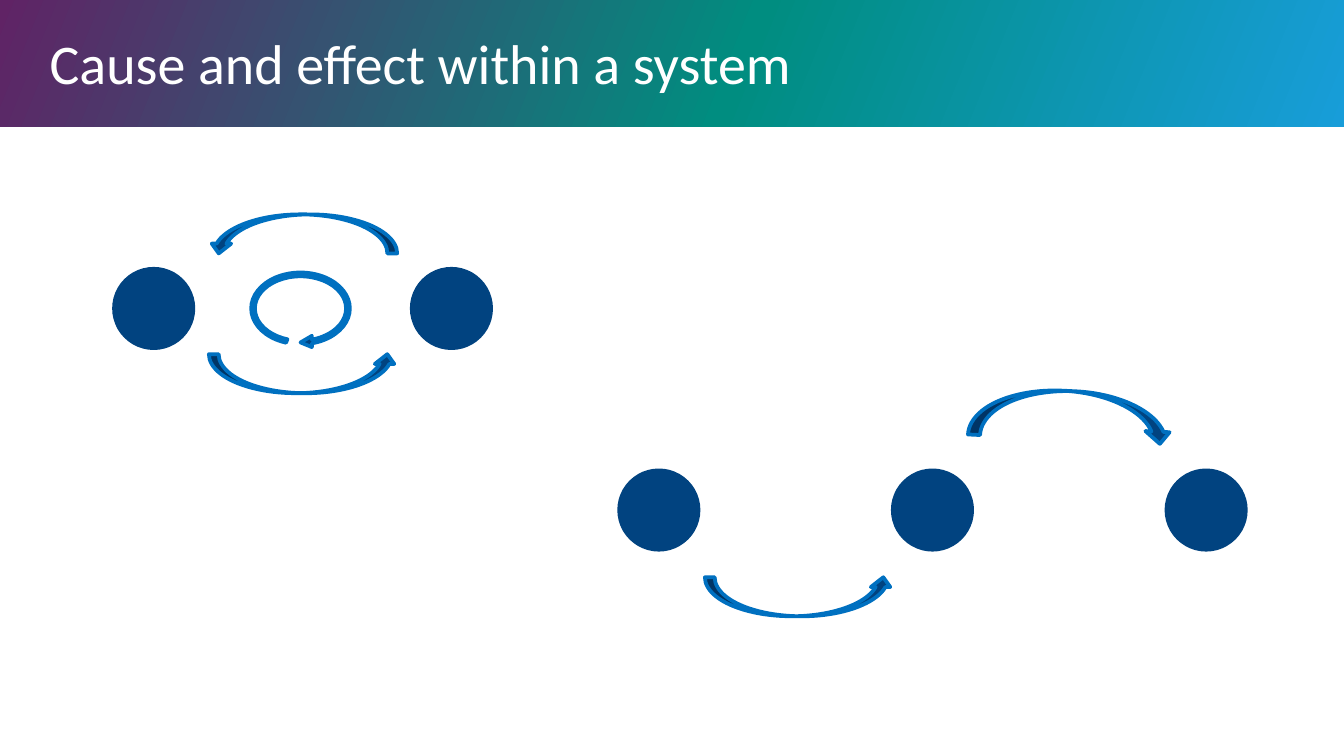
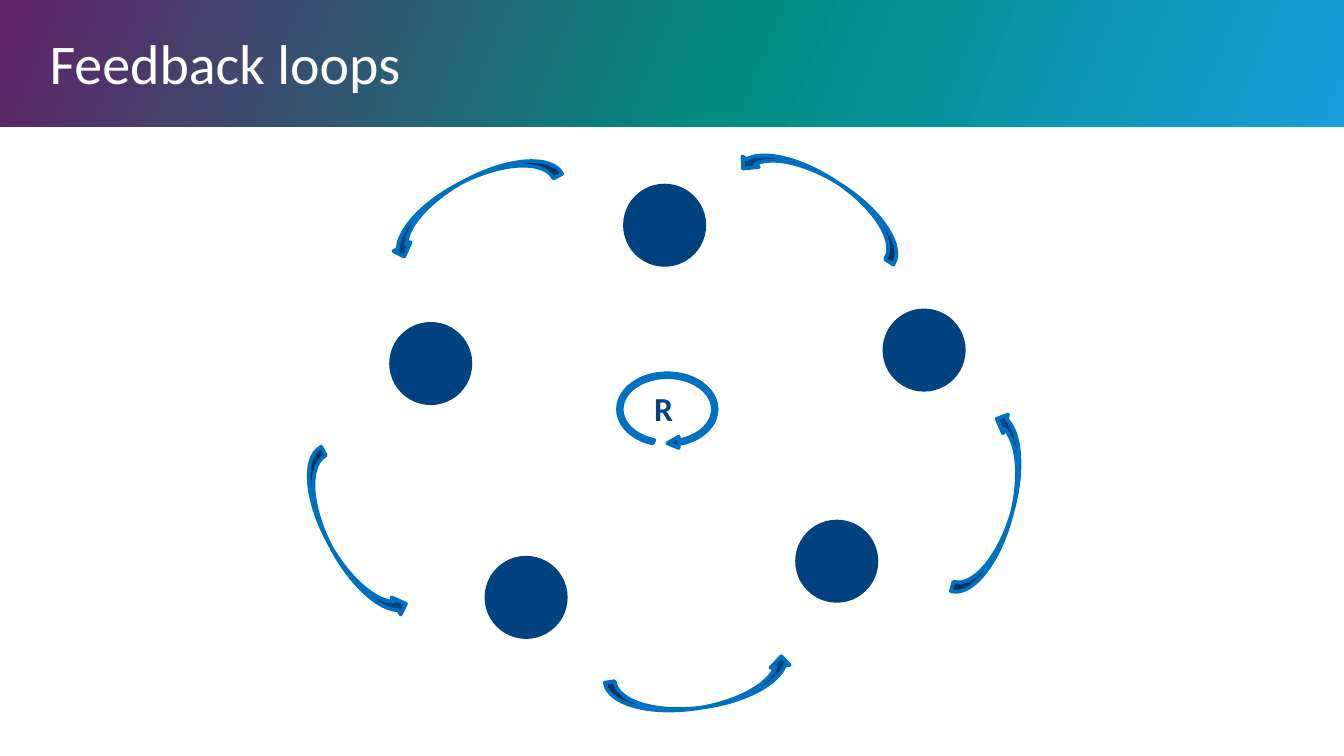
from copy import deepcopy
from lxml import etree
from pptx import Presentation
from pptx.dml.color import RGBColor
from pptx.enum.shapes import MSO_SHAPE
from pptx.enum.text import MSO_ANCHOR, MSO_AUTO_SIZE, PP_ALIGN
from pptx.oxml.ns import qn
from pptx.util import Pt

RECT, OVAL = MSO_SHAPE.RECTANGLE, MSO_SHAPE.OVAL
CURVED_RIGHT, CURVED_LEFT = MSO_SHAPE.CURVED_RIGHT_ARROW, MSO_SHAPE.CURVED_LEFT_ARROW
LOOP = MSO_SHAPE.CIRCULAR_ARROW
LEFT, TOP, MIDDLE = PP_ALIGN.LEFT, MSO_ANCHOR.TOP, MSO_ANCHOR.MIDDLE
NO_FIT, FIT_SHAPE = MSO_AUTO_SIZE.NONE, MSO_AUTO_SIZE.SHAPE_TO_FIT_TEXT

NAVY = RGBColor(0x01, 0x43, 0x80)
BLUE = RGBColor(0x00, 0x70, 0xC0)
WHITE = RGBColor(0xFF, 0xFF, 0xFF)
PURPLE = RGBColor(0x60, 0x23, 0x65)
TEAL = RGBColor(0x00, 0x8D, 0x80)
SKY = RGBColor(0x18, 0x9D, 0xD9)
FONT = "Calibri"
NODE = 42.5
ARROW = (20.9, 100.8)
LOOP_SIZE = (42.5, 56.9)
LOOP_ADJ = (0.047, 11.423, 204.576, 13.769, 0.071)


def write(sp, text, size=18, color=NAVY, bold=False, anchor=TOP, wrap=False, inset=None, fit=NO_FIT):
    tf = sp.text_frame
    tf.word_wrap, tf.vertical_anchor, tf.auto_size = wrap, anchor, fit
    if inset is not None:
        tf.margin_left = tf.margin_top = tf.margin_right = tf.margin_bottom = Pt(inset)
    p = tf.paragraphs[0]
    p.alignment = LEFT
    r = p.add_run()
    r.text = text
    r.font.name, r.font.size, r.font.bold = FONT, Pt(size), bold
    r.font.color.rgb = color


def draw(s, kind, x, y, w, h, line=BLUE, rot=0):
    sp = s.shapes.add_shape(kind, Pt(x), Pt(y), Pt(w), Pt(h))
    sp.shadow.inherit = False
    sp.fill.solid()
    sp.fill.fore_color.rgb = NAVY
    sp.line.color.rgb = line
    sp.line.width = Pt(2)
    etree.SubElement(sp.line._get_or_add_ln(), qn("a:round"))
    sp.rotation = rot
    return sp


slides = [
    {
        "title": "Cause and effect within a system",
        "nodes": [(61.1, 144), (220.6, 144), (331.7, 252), (478.3, 252), (624.9, 252)],
        "arrows": [(151.9, 74.9, 90), (151.9, 149.8, 270), (417.6, 269.3, 270)],
        "loop": (139.7, 136.8),
    },
    {
        "title": "Feedback loops",
        "nodes": [(209.5, 173.5), (260.6, 298.8), (334.8, 99.4), (473.8, 166.3), (427, 279.4)],
        "arrows": [(431.3, 55.4, 122.6), (176.4, 238.3, 331.6), (241.2, 56.9, 62.4),
                   (365, 318.2, 261.5), (522, 220.3, 194.9)],
        "loop": (336.2, 190.8),
    },
]

prs = Presentation()
prs.slide_width, prs.slide_height = Pt(720), Pt(405)
layout = prs.slide_layouts[5]
built = []

for content in slides:
    s = prs.slides.add_slide(layout)
    built.append(s)
    title = s.shapes.title
    title.left, title.top, title.width, title.height = Pt(26.6), Pt(18.7), Pt(668.2), Pt(29.5)
    write(title, content["title"], size=30, color=WHITE, anchor=MIDDLE, wrap=True, inset=0)
    for x, y in content["nodes"]:
        draw(s, OVAL, x, y, NODE, NODE, line=NAVY)
    for x, y, rot in content["arrows"]:
        draw(s, CURVED_RIGHT, x, y, *ARROW, rot=rot)
    loop = draw(s, LOOP, *content["loop"], *LOOP_SIZE, rot=90)
    for i, value in enumerate(LOOP_ADJ):
        loop.adjustments[i] = value

system, feedback = built
draw(system, CURVED_LEFT, 560.9, 167.8, 25.9, 109.4, rot=272.8)
label = feedback.shapes.add_textbox(Pt(343.4), Pt(204.5), Pt(24.5), Pt(28.8))
write(label, "R", bold=True, fit=FIT_SHAPE)

band = draw(system, RECT, 0, 0, 720, 67.9)
band.line.fill.background()
band.fill.gradient()
band.fill.gradient_angle = 338
stops = band._element.spPr.find(qn("a:gradFill")).find(qn("a:gsLst"))
stops.insert(1, deepcopy(stops[0]))
for stop, position, color in zip(band.fill.gradient_stops, (0, 0.55, 1), (PURPLE, TEAL, SKY)):
    stop.position = position
    stop.color.rgb = color
layout.shapes._spTree.insert(2, band._element)

prs.save("out.pptx")
